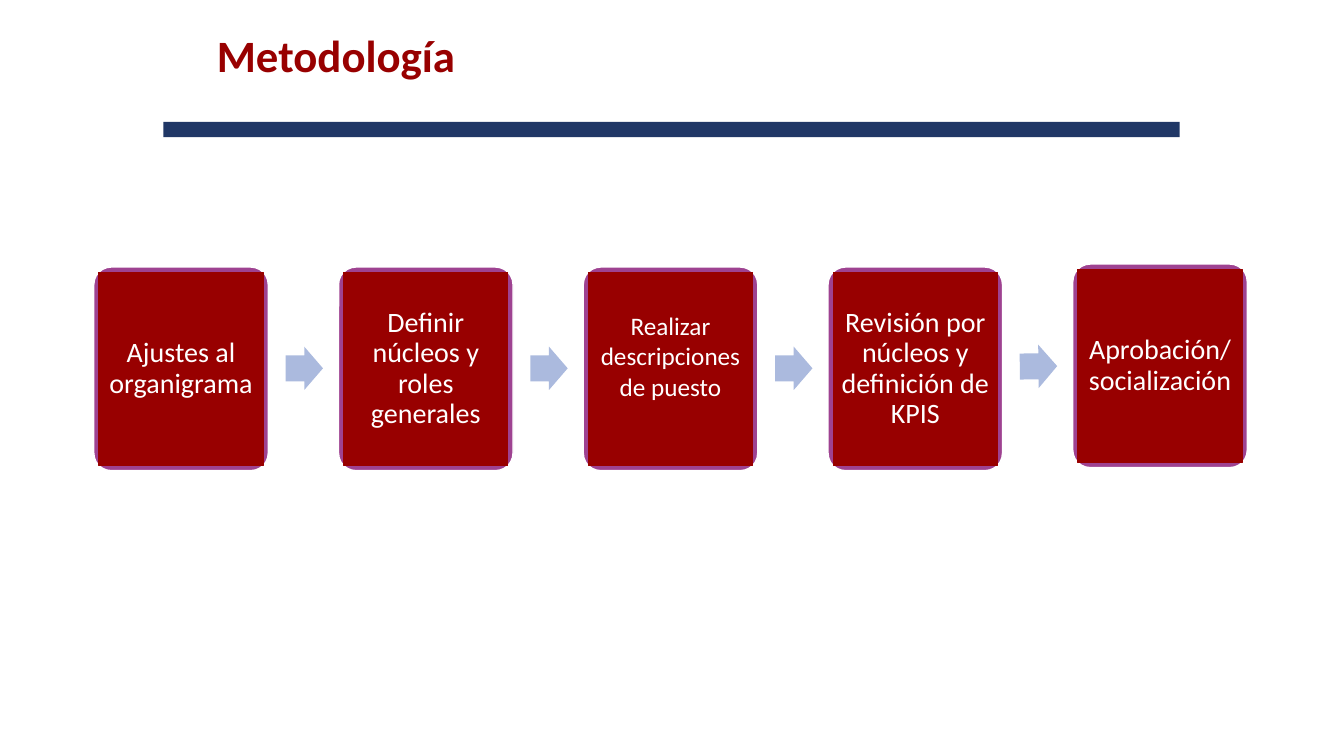
from pptx import Presentation
from pptx.dml.color import RGBColor
from pptx.enum.shapes import MSO_SHAPE as Shape
from pptx.enum.text import MSO_ANCHOR as Anchor, MSO_AUTO_SIZE as AutoSize, PP_ALIGN as Align
from pptx.util import Inches, Pt

COLORS = {"red": "980000", "navy": "203766", "purple": "9E4291",
          "arrow": "ABBADE", "white": "FFFFFF"}
FONT = "Calibri"

# All places and sizes are percentages of the slide's width and height.
FIRST_COLUMN, COLUMN_PITCH = 6.98, 18.21
FRAME_SIZE = 12.98, 26.93
CARD_INSET = 0.38, 0.67
ARROW_OFFSET = 14.27, 10.53
ARROW_SIZE = 2.78, 5.73
TOP, LAST_TOP = 35.33, 34.93

STEPS = ["Ajustes al organigrama", "Definir núcleos y roles generales",
         "Realizar descripciones de puesto",
         "Revisión por núcleos y definición de KPIS",
         "Aprobación/ socialización"]
SMALL_STEP = 2


class ProcessSlide:
    def __init__(self, deck):
        self.width, self.height = deck.slide_width, deck.slide_height
        self.slide = deck.slides.add_slide(deck.slide_layouts[5])

    def place(self, left, top, width, height):
        """Turn percentages of the slide into lengths."""
        return (int(self.width * left / 100), int(self.height * top / 100),
                int(self.width * width / 100), int(self.height * height / 100))

    def set_text(self, shape, text, size, color, align, anchor, inset, spacing, bold=False):
        frame = shape.text_frame
        frame.word_wrap = True
        frame.auto_size = AutoSize.NONE
        frame.vertical_anchor = anchor
        frame.margin_left = frame.margin_right = Inches(inset)
        frame.margin_top = frame.margin_bottom = Inches(inset)
        frame.text = text
        paragraph = frame.paragraphs[0]
        paragraph.alignment = align
        paragraph.line_spacing = spacing
        font = paragraph.font
        font.name, font.size, font.bold = FONT, Pt(size), bold
        font.color.rgb = RGBColor.from_string(COLORS[color])

    def title(self, text, *place):
        heading = self.slide.shapes.title
        heading.left, heading.top, heading.width, heading.height = self.place(*place)
        self.set_text(heading, text, 32, "red", Align.LEFT, Anchor.TOP, 0.1, 0.9, bold=True)

    def block(self, kind, fill, *place, line=None, line_width=1):
        block = self.slide.shapes.add_shape(kind, *self.place(*place))
        block.shadow.inherit = False
        block.fill.solid()
        block.fill.fore_color.rgb = RGBColor.from_string(COLORS[fill])
        if line:
            block.line.color.rgb = RGBColor.from_string(COLORS[line])
            block.line.width = Pt(line_width)
        else:
            block.line.fill.background()
        return block

    def step(self, text, left, top, small=False):
        """Draw a rounded frame with the step's card on it."""
        width, height = FRAME_SIZE
        inset_x, inset_y = CARD_INSET
        frame = self.block(Shape.ROUNDED_RECTANGLE, "purple", left, top, width, height,
                           line="white")
        frame.adjustments[0] = 0.1
        card = self.block(Shape.RECTANGLE, "red", left + inset_x, top + inset_y,
                          width - 2 * inset_x, height - 2 * inset_y,
                          line="red", line_width=0.75)
        self.set_text(card, text, 18 if small else 20, "white", Align.CENTER,
                      Anchor.MIDDLE, 0.08, 1.0 if small else 0.9)
        if small:
            card.text_frame.margin_bottom = Inches(0.34)

    def arrow(self, left, top, rotation=0):
        arrow = self.block(Shape.RIGHT_ARROW, "arrow", left, top, *ARROW_SIZE)
        arrow.adjustments[0], arrow.adjustments[1] = 0.6, 0.5
        arrow.rotation = rotation


def main():
    deck = Presentation()
    deck.slide_width, deck.slide_height = Inches(13.33), Inches(7.5)
    page = ProcessSlide(deck)
    page.title("Metodología", 15.38, 3.07, 63.62, 12.27)
    page.block(Shape.RECTANGLE, "navy", 12.15, 16.13, 75.62, 2)

    last = len(STEPS) - 1
    arrow_x, arrow_y = ARROW_OFFSET
    for index, text in enumerate(STEPS):
        left = FIRST_COLUMN + index * COLUMN_PITCH
        page.step(text, left, LAST_TOP if index == last else TOP, index == SMALL_STEP)
        if index < last:
            rises = index == last - 1
            page.arrow(left + arrow_x, TOP + arrow_y - (0.27 if rises else 0),
                       359.3 if rises else 0)
    deck.save("out.pptx")


if __name__ == "__main__":
    main()
